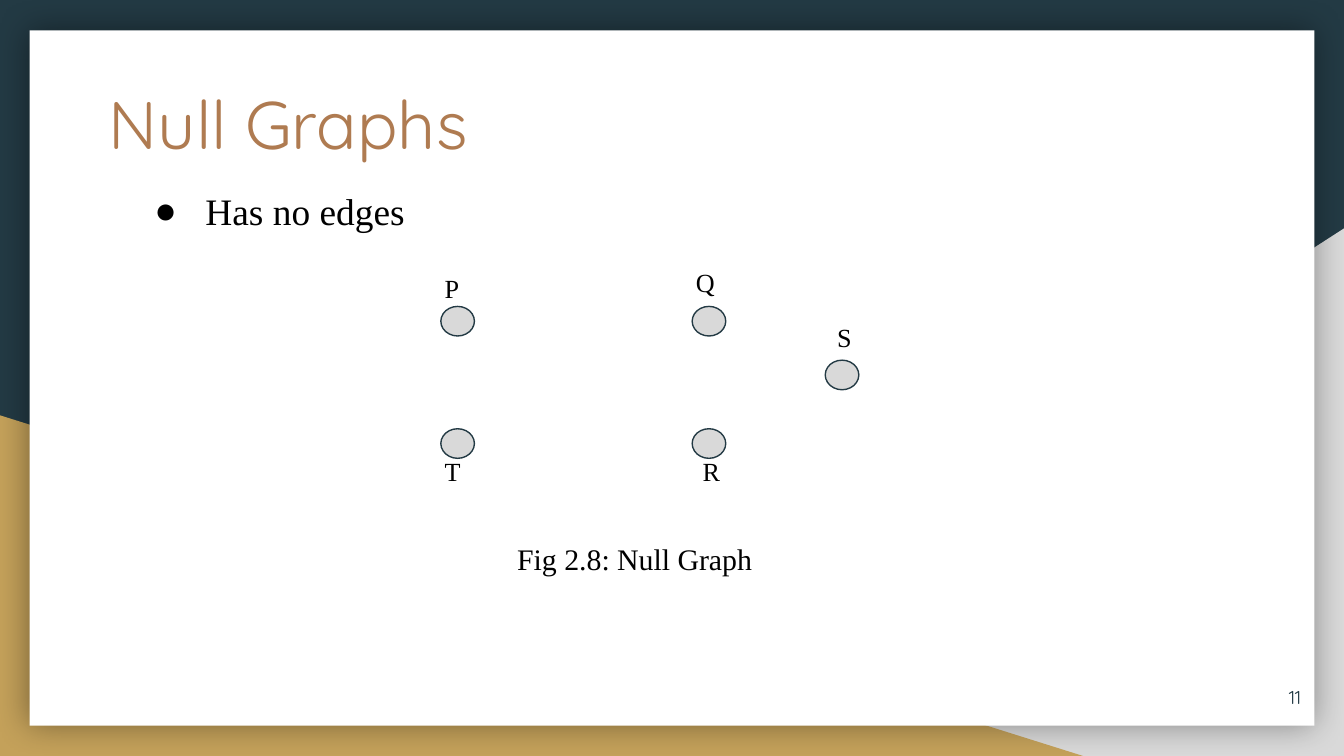
"""Build the Null Graphs slide on a grid of 100 columns by 56.25 rows."""
from typing import NamedTuple

from lxml.etree import SubElement as Sub
from pptx import Presentation
from pptx.dml.color import RGBColor as Rgb
from pptx.enum.shapes import MSO_SHAPE as Kind
from pptx.enum.text import MSO_ANCHOR as Anchor, MSO_AUTO_SIZE as Auto, PP_ALIGN as Align
from pptx.oxml.ns import qn
from pptx.util import Inches, Pt

COLS, ROWS = 100, 56.25
CELL = Inches(0.1)
SERIF, ROUND = "Times New Roman", "Quicksand"
HUES = {
    "navy": "233A44",
    "grey": "D9D9D9",
    "gold": "C4A15A",
    "white": "FFFFFF",
    "brown": "AF7B51",
    "black": "000000",
}


class Box(NamedTuple):
    col: float
    row: float
    cols: float
    rows: float

    def place(self) -> list[int]:
        return [int(n * CELL) for n in self]


class Panel(NamedTuple):
    kind: Kind
    box: Box
    hue: str


class Style(NamedTuple):
    size: int
    font: str = SERIF
    hue: str = "black"
    align: Align = Align.LEFT
    anchor: Anchor = Anchor.TOP


class Node(NamedTuple):
    name: str
    col: float
    row: float
    tag_col: float
    tag_row: float


LEFT, RIGHT, TOP, BASE = 32.8, 51.5, 22.8, 31.9
PANELS = [
    Panel(Kind.RIGHT_TRIANGLE, Box(39.2, 17, 60.8, 39.25), "grey"),
    Panel(Kind.RIGHT_TRIANGLE, Box(0, 30.9, 80.6, 25.35), "gold"),
    Panel(Kind.RECTANGLE, Box(2.2, 2.25, 95.6, 51.75), "white"),
]
NODES = [
    Node("P", LEFT, TOP, 32.1, 19.3),
    Node("Q", RIGHT, TOP, 50.8, 18.8),
    Node("T", LEFT, BASE, 32.1, 32.9),
    Node("R", RIGHT, BASE, 51.3, 32.9),
    Node("S", 61.4, 26.8, 61.3, 22.9),
]


def tint(hue: str) -> Rgb:
    return Rgb.from_string(HUES[hue])


def draw(slide, panel: Panel):
    shape = slide.shapes.add_shape(panel.kind, *panel.box.place())
    shape.shadow.inherit = False
    shape.fill.solid()
    shape.fill.fore_color.rgb = tint(panel.hue)
    shape.line.fill.background()
    return shape


def glow(shape) -> None:
    group = shape._element.spPr.find(qn("a:effectLst"))
    cast = Sub(group, qn("a:outerShdw"), blurRad=str(Pt(18)), dist="0",
               algn="ctr", rotWithShape="0")
    shade = Sub(cast, qn("a:srgbClr"), val=HUES["black"])
    Sub(shade, qn("a:alpha"), val="40000")


def bullet(para) -> None:
    props = para._p.get_or_add_pPr()
    props.set("marL", str(Inches(0.53)))
    props.set("indent", str(Inches(-0.38)))
    Sub(Sub(props, qn("a:buClr")), qn("a:srgbClr"), val=HUES["black"])
    Sub(props, qn("a:buFont"), typeface=SERIF)
    Sub(props, qn("a:buChar"), char="●")


def fill_text(shape, text: str, style: Style):
    frame = shape.text_frame
    frame.word_wrap = True
    frame.auto_size = Auto.NONE
    frame.vertical_anchor = style.anchor
    frame.margin_left = frame.margin_right = CELL
    frame.margin_top = frame.margin_bottom = CELL
    para = frame.paragraphs[0]
    para.alignment = style.align
    run = para.add_run()
    run.text = text
    run.font.size = Pt(style.size)
    run.font.name = style.font
    run.font.color.rgb = tint(style.hue)
    return para


def write(slide, box: Box, text: str, style: Style):
    return fill_text(slide.shapes.add_textbox(*box.place()), text, style)


def head(slide, box: Box, text: str, style: Style) -> None:
    title = slide.shapes.title
    title.left, title.top, title.width, title.height = box.place()
    fill_text(title, text, style)
    slide.shapes._spTree.append(title._element)


def plot(slide, node: Node) -> None:
    dot = draw(slide, Panel(Kind.OVAL, Box(node.col, node.row, 2.5, 2.2), "grey"))
    dot.line.color.rgb = tint("navy")
    dot.line.width = Pt(0.75)
    write(slide, Box(node.tag_col, node.tag_row, 4, 3.5), node.name, Style(14))


def main() -> None:
    deck = Presentation()
    deck.slide_width, deck.slide_height = int(COLS * CELL), int(ROWS * CELL)
    slide = deck.slides.add_slide(deck.slide_layouts[5])
    slide.background.fill.solid()
    slide.background.fill.fore_color.rgb = tint("navy")
    wedge, _, card = [draw(slide, panel) for panel in PANELS]
    wedge._element.spPr.get_or_add_xfrm().set("flipH", "1")
    glow(card)
    head(slide, Box(7.1, 5.1, 55.9, 7.1), "Null Graphs", Style(36, ROUND, "brown"))
    bullet(write(slide, Box(9, 13, 64.8, 9.7), "Has no edges", Style(20)))
    for node in NODES:
        plot(slide, node)
    write(slide, Box(37.5, 39.2, 21.7, 3.5), "Fig 2.8: Null Graph", Style(16))
    write(slide, Box(91.8, 49.7, 6, 4.3), "11",
          Style(10, ROUND, "navy", Align.RIGHT, Anchor.MIDDLE))
    deck.save("out.pptx")


if __name__ == "__main__":
    main()
